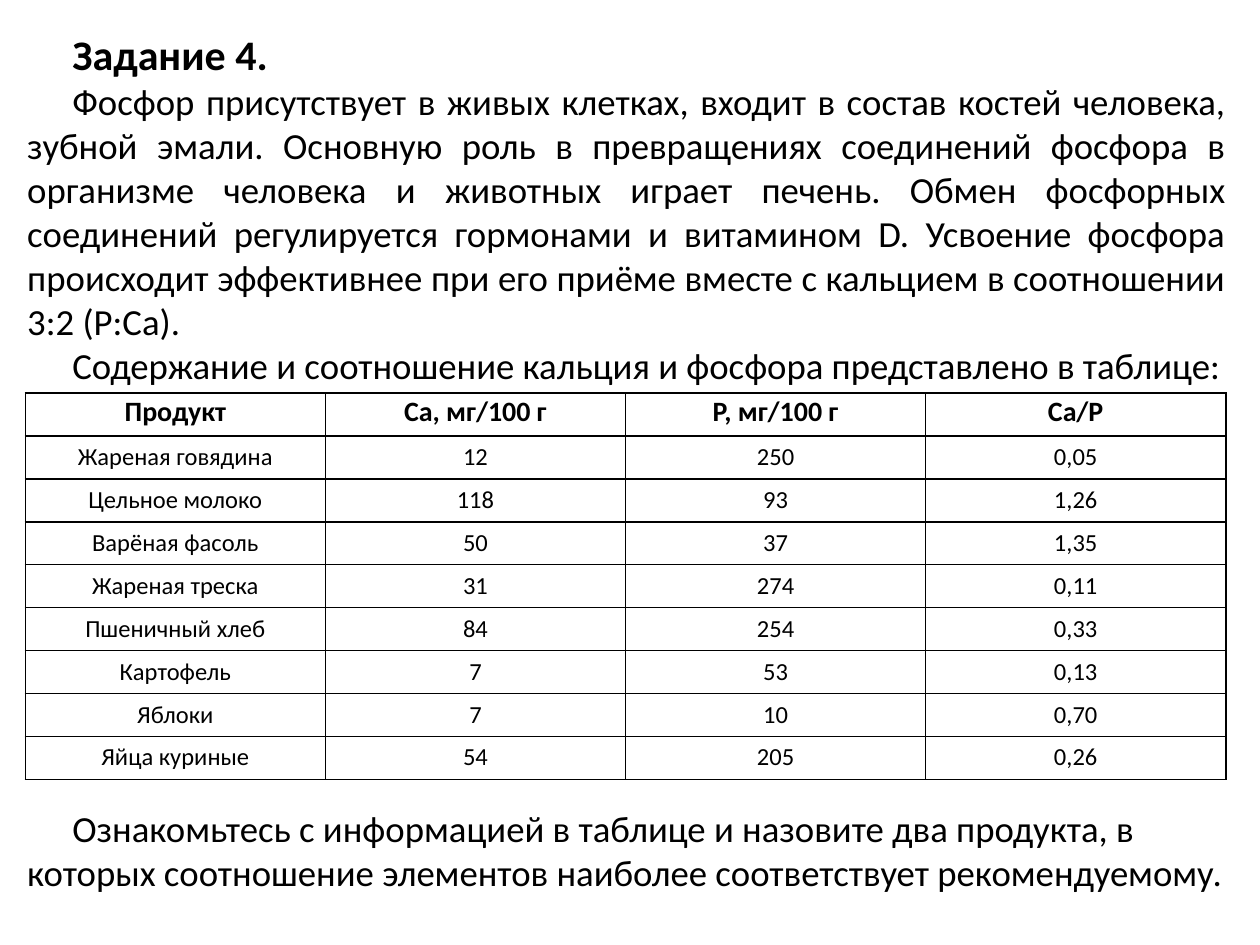
from dataclasses import dataclass

from lxml import etree
from pptx import Presentation
from pptx.dml.color import RGBColor
from pptx.enum.text import MSO_ANCHOR, PP_ALIGN
from pptx.oxml.ns import qn
from pptx.util import Cm, Pt

CENTER, JUSTIFY, LEFT = PP_ALIGN.CENTER, PP_ALIGN.JUSTIFY, PP_ALIGN.LEFT
MIDDLE = MSO_ANCHOR.MIDDLE
COLORS = {"text": "000000", "border": "000000"}
FONT = "Calibri"
FIRST_LINE_INDENT = Cm(0.91)
BORDER_WIDTH = Pt(1)
CELL_FORMAT = {
    "vertical_anchor": MIDDLE,
    "margin_left": 0,
    "margin_right": 0,
    "margin_top": 0,
    "margin_bottom": 0,
}
CELL_PARAGRAPH_FORMAT = {
    "alignment": CENTER,
    "line_spacing": Pt(16.5),
    "space_before": Pt(1.5),
    "space_after": Pt(3),
}


@dataclass
class TaskParagraph:
    text: str
    size: float = 21
    bold: bool = False
    alignment: PP_ALIGN = JUSTIFY
    space_before: float = 0


TASK_PARAGRAPHS = [
    TaskParagraph("Задание 4.", size=24, bold=True),
    TaskParagraph(
        "Фосфор присутствует в живых клетках, входит в состав костей человека, "
        "зубной эмали. Основную роль в превращениях соединений фосфора в "
        "организме человека и животных играет печень. Обмен фосфорных "
        "соединений регулируется гормонами и витамином D. Усвоение фосфора "
        "происходит эффективнее при его приёме вместе с кальцием в "
        "соотношении 3:2 (P:Ca)."
    ),
    TaskParagraph("Содержание и соотношение кальция и фосфора представлено в таблице:"),
    TaskParagraph(
        "Ознакомьтесь с информацией в таблице и назовите два продукта, в "
        "которых соотношение элементов наиболее соответствует рекомендуемому.",
        alignment=LEFT,
        space_before=239,
    ),
]
PRODUCT_ROWS = [
    ("Продукт", "Ca, мг/100 г", "P, мг/100 г", "Ca/P"),
    ("Жареная говядина", "12", "250", "0,05"),
    ("Цельное молоко", "118", "93", "1,26"),
    ("Варёная фасоль", "50", "37", "1,35"),
    ("Жареная треска", "31", "274", "0,11"),
    ("Пшеничный хлеб", "84", "254", "0,33"),
    ("Картофель", "7", "53", "0,13"),
    ("Яблоки", "7", "10", "0,70"),
    ("Яйца куриные", "54", "205", "0,26"),
]


def set_attributes(target, values: dict) -> None:
    for name, value in values.items():
        setattr(target, name, value)


def add_span(para, text: str, size: float, bold: bool) -> None:
    span = para.add_run()
    span.text = text
    set_attributes(span.font, {"name": FONT, "size": Pt(size), "bold": bold})
    span.font.color.rgb = RGBColor.from_string(COLORS["text"])


def add_borders(cell) -> None:
    properties = cell._tc.get_or_add_tcPr()
    for side in ("a:lnL", "a:lnR", "a:lnT", "a:lnB"):
        line = etree.SubElement(properties, qn(side), w=str(BORDER_WIDTH))
        fill = etree.SubElement(line, qn("a:solidFill"))
        etree.SubElement(fill, qn("a:srgbClr"), val=COLORS["border"])


def add_product_table(page) -> None:
    row_count, column_count = len(PRODUCT_ROWS), len(PRODUCT_ROWS[0])
    table = page.shapes.add_table(
        row_count, column_count, Cm(0.51), Cm(7.92), Cm(24.2), Cm(7.8)
    ).table
    set_attributes(table, {"first_row": False, "horz_banding": False})
    for row_index, values in enumerate(PRODUCT_ROWS):
        is_header = row_index == 0
        for column_index, value in enumerate(values):
            cell = table.cell(row_index, column_index)
            set_attributes(cell, CELL_FORMAT)
            add_borders(cell)
            cell.fill.background()
            para = cell.text_frame.paragraphs[0]
            set_attributes(para, CELL_PARAGRAPH_FORMAT)
            add_span(para, value, 16 if is_header else 14, is_header)


def add_task_text(page) -> None:
    box = page.shapes.add_textbox(Cm(0.3), Cm(0.36), Cm(24.66), Cm(17.86))
    frame = box.text_frame
    set_attributes(frame, {"word_wrap": True, "vertical_anchor": MIDDLE})
    for index, item in enumerate(TASK_PARAGRAPHS):
        para = frame.add_paragraph() if index else frame.paragraphs[0]
        set_attributes(
            para,
            {"alignment": item.alignment, "space_before": Pt(item.space_before)},
        )
        para._p.get_or_add_pPr().set("indent", str(FIRST_LINE_INDENT))
        add_span(para, item.text, item.size, item.bold)


def main() -> None:
    deck = Presentation()
    set_attributes(deck, {"slide_width": Cm(25.4), "slide_height": Cm(19.05)})
    page = deck.slides.add_slide(deck.slide_layouts[6])
    add_product_table(page)
    add_task_text(page)
    deck.save("out.pptx")


if __name__ == "__main__":
    main()
